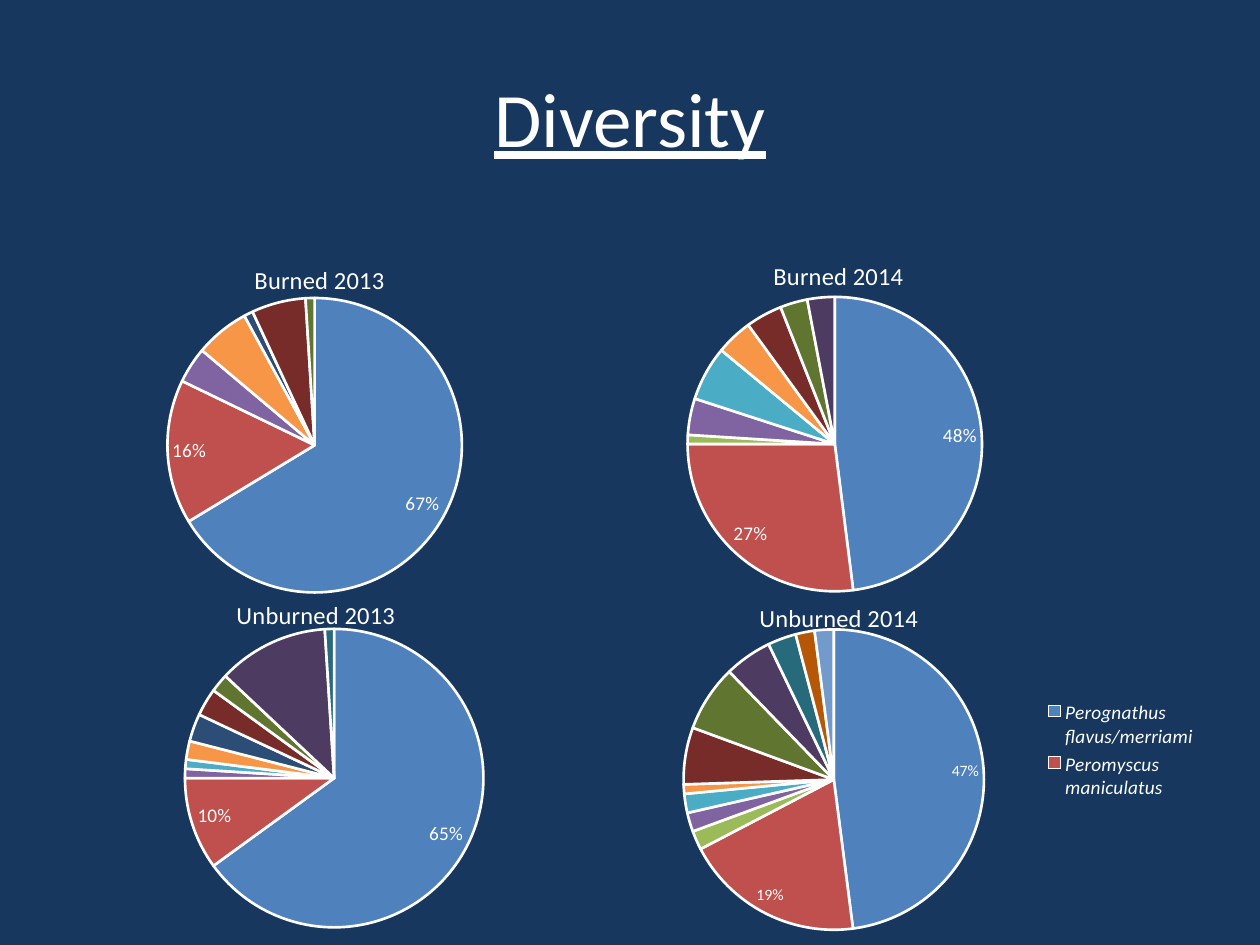
from dataclasses import dataclass

import lxml.etree
import pptx
import pptx.chart.data
import pptx.dml.color
import pptx.enum.chart
import pptx.enum.text
import pptx.oxml
import pptx.oxml.ns
import pptx.util

Pt = pptx.util.Pt
FONT = "Calibri"
WHITE = "FFFFFF"
BACKGROUND = "17375E"
SLICE_COLORS = [
    "4F81BD", "C0504D", "9BBB59", "8064A2", "4BACC6",
    "F79646", "2C4D75", "772C2A", "5F7530", "4D3B62",
    "276A7C", "B65708", "729ACA", "CD7371", "AFC97A",
]
SPECIES = ["Perognathus flavus/merriami", "Peromyscus maniculatus"]
LABELLED_SLICES = len(SPECIES)


@dataclass(frozen=True)
class Box:
    left: float
    top: float
    width: float
    height: float


@dataclass(frozen=True)
class Pie:
    title: str
    values: list[int]
    frame: Box
    disc: Box
    heading: Box
    label_size: float = 11
    legend: Box | None = None


PIES = [
    Pie("Burned 2013", [67, 16, 0, 4, 0, 6, 1, 6, 1],
        Box(-15.1, 126.7, 390.2, 221.8), Box(95.7, 170.3, 168.3, 168.3),
        Box(142.9, 148, 74, 17)),
    Pie("Unburned 2013", [65, 10, 0, 1, 1, 2, 3, 3, 2, 12, 1],
        Box(-7.2, 315.4, 375.1, 224.6), Box(105.7, 359.4, 170.6, 170.6),
        Box(132.6, 338.9, 91, 17)),
    Pie("Burned 2014", [48, 27, 1, 4, 6, 4, 0, 4, 3, 3, 0],
        Box(311.8, 126, 329.8, 222.5), Box(392.9, 169.7, 168.3, 168.3),
        Box(439.4, 145.7, 74, 17)),
    Pie("Unburned 2014", [47, 19, 2, 2, 2, 1, 0, 6, 7, 5, 3, 2, 2, 0, 0],
        Box(358.6, 317.5, 331.2, 224.6), Box(390.6, 359.7, 171.7, 171.7),
        Box(431.4, 341.1, 91, 17), label_size=9,
        legend=Box(594, 398, 93, 62)),
]


def color(value: str) -> pptx.dml.color.RGBColor:
    return pptx.dml.color.RGBColor.from_string(value)


def style_font(font, size: float) -> None:
    font.name = FONT
    font.size = Pt(size)
    font.bold = False
    font.color.rgb = color(WHITE)


def chart_element(tag: str, value: str | None = None):
    element = pptx.oxml.parse_xml(f'<c:{tag} {pptx.oxml.ns.nsdecls("c")}/>')
    if value is not None:
        element.set("val", value)
    return element


def place(parent, index: int, box: Box, frame: Box, inner: bool = False) -> None:
    """Fix a chart part at a slide position, as fractions of the chart frame."""
    for old in parent.findall(pptx.oxml.ns.qn("c:layout")):
        parent.remove(old)
    layout = chart_element("layout")
    manual = chart_element("manualLayout")
    layout.append(manual)
    settings = {
        "xMode": "edge",
        "yMode": "edge",
        "x": (box.left - frame.left) / frame.width,
        "y": (box.top - frame.top) / frame.height,
        "w": box.width / frame.width,
        "h": box.height / frame.height,
    }
    if inner:
        settings = {"layoutTarget": "inner", **settings}
    for tag, value in settings.items():
        manual.append(chart_element(tag, str(value)))
    parent.insert(index, layout)


def make_transparent(chart) -> None:
    properties = chart_element("spPr")
    for tags in (["noFill"], ["ln", "noFill"]):
        parent = properties
        for tag in tags:
            parent = lxml.etree.SubElement(parent, pptx.oxml.ns.qn(f"a:{tag}"))
    chart._chartSpace.find(pptx.oxml.ns.qn("c:chart")).addnext(properties)


def add_legend(chart, pie: Pie) -> None:
    """Add a legend that names only the labelled slices."""
    chart.has_legend = True
    legend = chart.legend
    legend.position = pptx.enum.chart.XL_LEGEND_POSITION.RIGHT
    legend.include_in_layout = False
    style_font(legend.font, 11)
    legend.font.italic = True
    element = legend._element
    place(element, 1, pie.legend, pie.frame)
    for offset, index in enumerate(range(LABELLED_SLICES, len(pie.values))):
        entry = chart_element("legendEntry")
        entry.append(chart_element("idx", str(index)))
        entry.append(chart_element("delete", "1"))
        element.insert(1 + offset, entry)


def style_slices(series, pie: Pie) -> None:
    series.data_labels.show_value = False
    for index in range(len(pie.values)):
        point = series.points[index]
        point.format.fill.solid()
        point.format.fill.fore_color.rgb = color(SLICE_COLORS[index])
        point.format.line.color.rgb = color(WHITE)
        point.format.line.width = Pt(1.5)
        if index < LABELLED_SLICES:
            label = point.data_label
            style_font(label.font, pie.label_size)
            label.position = pptx.enum.chart.XL_LABEL_POSITION.BEST_FIT


def add_pie(slide, pie: Pie) -> None:
    data = pptx.chart.data.CategoryChartData(number_format='0"%"')
    names = [str(number) for number in range(1, len(pie.values) + 1)]
    if pie.legend:
        names[:LABELLED_SLICES] = SPECIES
    data.categories = names
    data.add_series("Series 1", pie.values)
    frame = pie.frame
    chart = slide.shapes.add_chart(
        pptx.enum.chart.XL_CHART_TYPE.PIE,
        Pt(frame.left), Pt(frame.top), Pt(frame.width), Pt(frame.height), data,
    ).chart
    style_font(chart.font, 10)
    make_transparent(chart)
    chart.has_legend = False
    chart.has_title = True
    run = chart.chart_title.text_frame.paragraphs[0].add_run()
    run.text = pie.title
    style_font(run.font, 14)
    place(chart.chart_title._element, 1, pie.heading, frame)
    plot_area = chart._chartSpace.chart.plotArea
    place(plot_area, 0, pie.disc, frame, inner=True)
    chart.plots[0].vary_by_categories = True
    style_slices(chart.plots[0].series[0], pie)
    if pie.legend:
        add_legend(chart, pie)


def add_title(slide, text: str) -> None:
    shape = slide.shapes.add_textbox(Pt(36), Pt(21.6), Pt(648), Pt(90))
    text_frame = shape.text_frame
    text_frame.word_wrap = True
    text_frame.vertical_anchor = pptx.enum.text.MSO_ANCHOR.MIDDLE
    paragraph = text_frame.paragraphs[0]
    paragraph.alignment = pptx.enum.text.PP_ALIGN.CENTER
    run = paragraph.add_run()
    run.text = text
    style_font(run.font, 44)
    run.font.underline = True


def main() -> None:
    presentation = pptx.Presentation()
    presentation.slide_width = Pt(720)
    presentation.slide_height = Pt(540)
    slide = presentation.slides.add_slide(presentation.slide_layouts[6])
    slide.background.fill.solid()
    slide.background.fill.fore_color.rgb = color(BACKGROUND)
    add_title(slide, "Diversity")
    for pie in PIES:
        add_pie(slide, pie)
    presentation.save("out.pptx")


if __name__ == "__main__":
    main()
